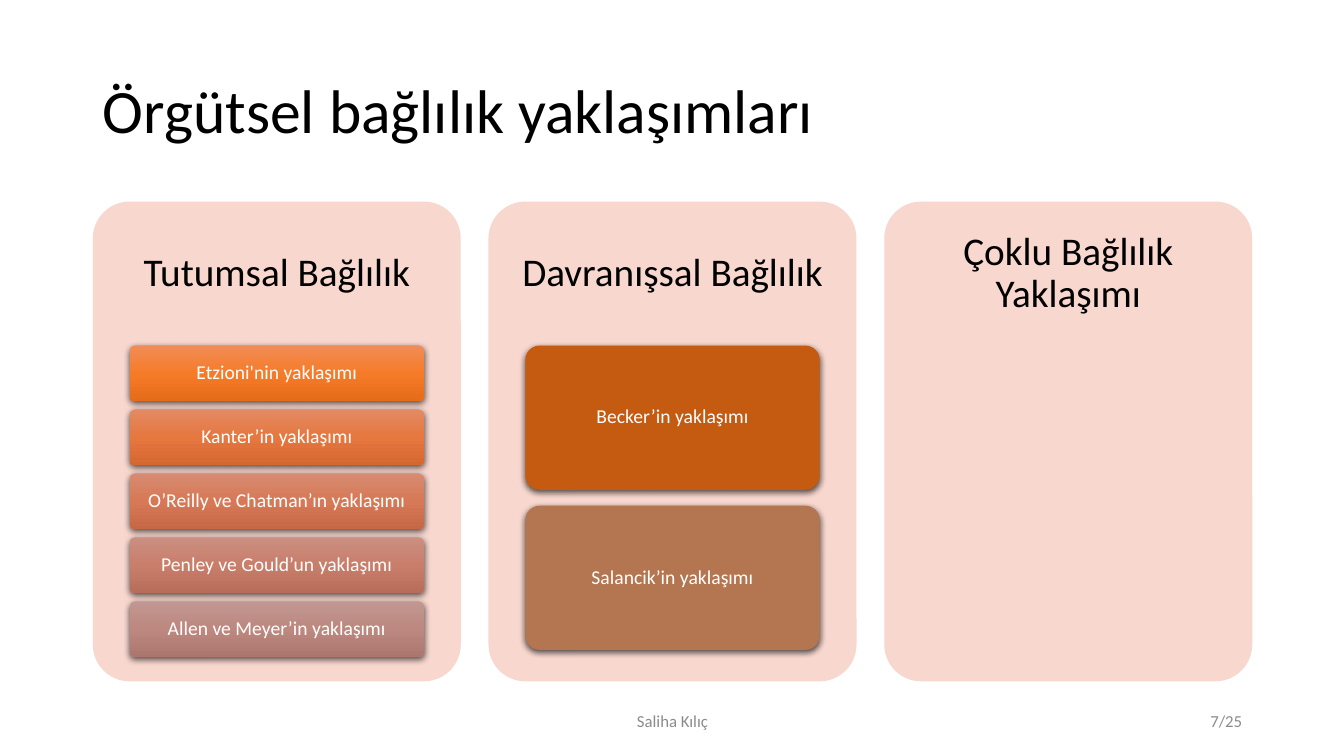
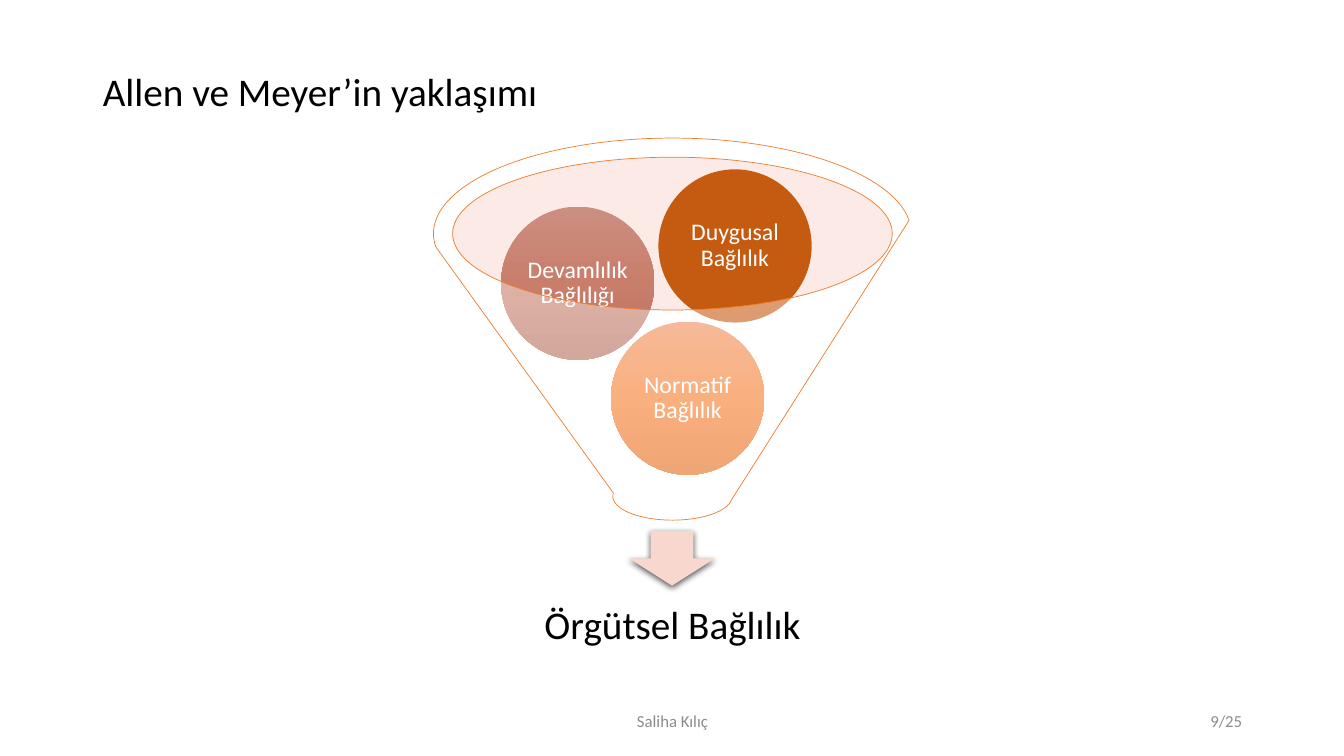
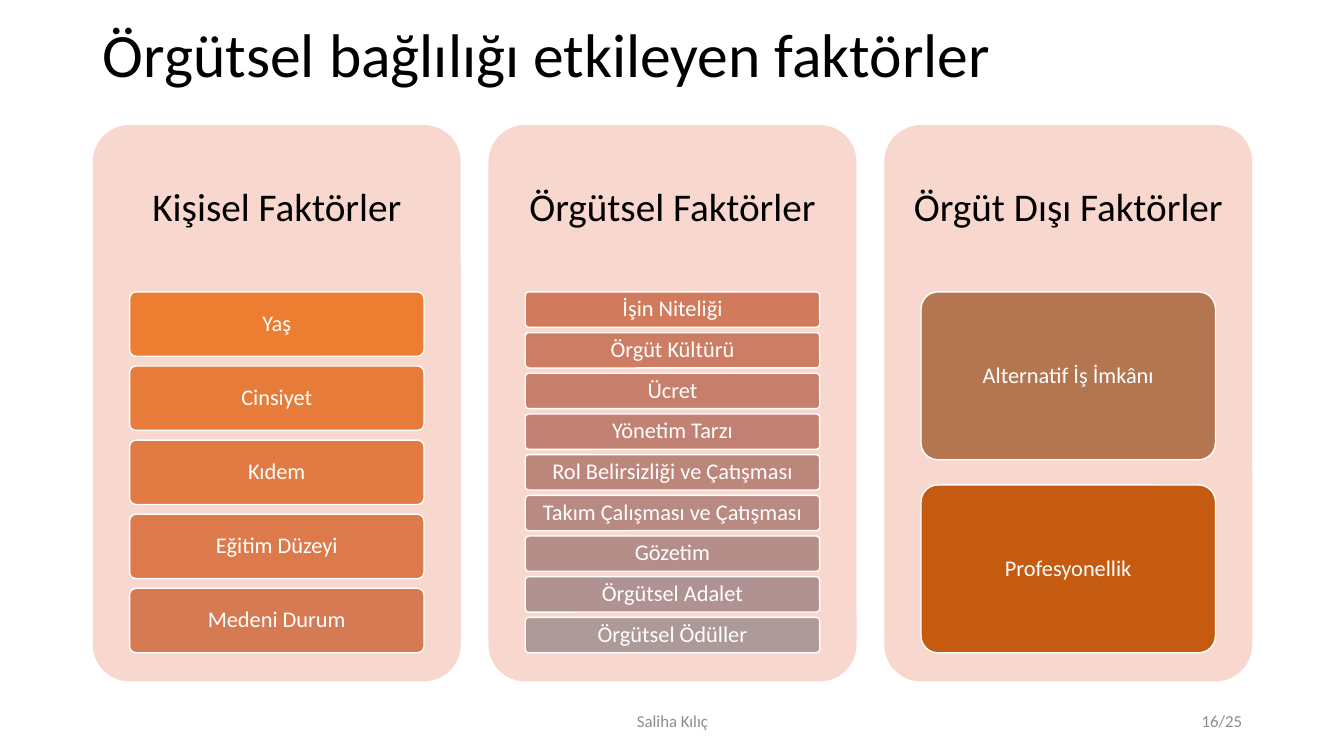
"""Build three slides on approaches to and factors of organisational commitment."""
from copy import deepcopy

from lxml import etree
from pptx import Presentation
from pptx.dml.color import RGBColor
from pptx.enum import shapes, text
from pptx.oxml.ns import qn
from pptx.util import Inches, Pt

BLACK = RGBColor(0x00, 0x00, 0x00)
WHITE = RGBColor(0xFF, 0xFF, 0xFF)
GREY = RGBColor(0x8C, 0x8C, 0x8C)
PANEL = RGBColor(0xF8, 0xD7, 0xCE)
RIM = RGBColor(0xF6, 0xCC, 0xBE)
ORANGE = RGBColor(0xED, 0x7D, 0x31)
RUST = RGBColor(0xC5, 0x5A, 0x11)
BROWN = RGBColor(0xB3, 0x76, 0x51)
GLOW_ORANGE = [RGBColor.from_string(code) for code in ("F18C57", "F67B28", "E56C19")]
GLOW_CORAL = [RGBColor.from_string(code) for code in ("E38A63", "E6773F", "D56730")]
GLOW_CLAY = [RGBColor.from_string(code) for code in ("D78B72", "D77956", "C66846")]
GLOW_ROSE = [RGBColor.from_string(code) for code in ("CB8F81", "C97E6B", "B76D5B")]
GLOW_MAUVE = [RGBColor.from_string(code) for code in ("C19791", "BC8880", "AA766E")]
PERSONAL = [RGBColor.from_string(code) for code in
            ("ED7D31", "E77B3A", "E17A43", "DC7A4B", "D67A54")]
ORGANISATIONAL = [RGBColor.from_string(code) for code in
                  ("D17B5C", "CC7D64", "C77F6C", "C28273", "BD867B",
                   "B98A82", "B58E8A", "B09391", "AC9998")]

LEFT = text.PP_ALIGN.LEFT
CENTER = text.PP_ALIGN.CENTER
RIGHT = text.PP_ALIGN.RIGHT
KIND = shapes.MSO_SHAPE


def write(box, words, size, color, align=CENTER, margins=(0.1, 0.05), spacing=0.9):
    """Fill a box with one formatted paragraph."""
    frame = box.text_frame
    side, edge = (Inches(margin) for margin in margins)
    layout = {"word_wrap": True, "auto_size": text.MSO_AUTO_SIZE.NONE,
              "vertical_anchor": text.MSO_ANCHOR.MIDDLE,
              "margin_left": side, "margin_right": side,
              "margin_top": edge, "margin_bottom": edge}
    for name, value in layout.items():
        setattr(frame, name, value)
    para = frame.paragraphs[0]
    para.alignment = align
    para.line_spacing = spacing
    span = para.add_run()
    span.text = words
    for name, value in {"name": "Calibri", "size": Pt(size), "bold": False}.items():
        setattr(span.font, name, value)
    span.font.color.rgb = color


def draw(page, kind, at, fill, line=None, shadow=False, opacity=None):
    """Add a preset shape with a solid or three-stop fill."""
    shape = page.shapes.add_shape(kind, *map(Inches, at))
    shape.shadow.inherit = False
    props = shape._element.spPr
    if kind == KIND.ROUNDED_RECTANGLE:
        shape.adjustments[0] = 0.1
    if isinstance(fill, list):
        shape.fill.gradient()
        shape.fill.gradient_angle = 270
        stops = props.find(".//" + qn("a:gsLst"))
        stops.insert(1, deepcopy(stops[0]))
        for stop, position, color in zip(shape.fill.gradient_stops, (0, 0.5, 1), fill):
            stop.position = position
            stop.color.rgb = color
    else:
        shape.fill.solid()
        shape.fill.fore_color.rgb = fill
    if opacity:
        color = props.find(qn("a:solidFill")).find(qn("a:srgbClr"))
        etree.SubElement(color, qn("a:alpha"), val=str(opacity * 1000))
    if line:
        shape.line.color.rgb, shape.line.width = line[0], Pt(line[1])
    else:
        shape.line.fill.background()
    if shadow:
        outer = etree.SubElement(props.find(qn("a:effectLst")), qn("a:outerShdw"),
                                 blurRad=str(Pt(4.5)), dist=str(Pt(1.5)),
                                 dir="5400000", algn="ctr", rotWithShape="0")
        color = etree.SubElement(outer, qn("a:srgbClr"), val="000000")
        etree.SubElement(color, qn("a:alpha"), val="63000")
    return shape


deck = Presentation()
deck.slide_width = Inches(13.33)
deck.slide_height = Inches(7.5)

pages = []
for title, top, height, size, number in (
    ("Örgütsel bağlılık yaklaşımları", 0.4, 1.45, 44, "7/25"),
    ("Allen ve Meyer’in yaklaşımı", 0.46, 0.94, 28, "9/25"),
    ("Örgütsel bağlılığı etkileyen faktörler", 0.15, 0.84, 44, "16/25"),
):
    page = deck.slides.add_slide(deck.slide_layouts[5])
    heading = page.shapes.title
    place = {"left": 0.92, "top": top, "width": 11.5, "height": height}
    for name, value in place.items():
        setattr(heading, name, Inches(value))
    write(heading, title, size, BLACK, LEFT)
    for words, left, width, align in (("Saliha Kılıç", 4.42, 4.5, CENTER),
                                      (number, 9.42, 3, RIGHT)):
        footer = page.shapes.add_textbox(*map(Inches, (left, 6.95, width, 0.4)))
        write(footer, words, 12, GREY, align, spacing=1)
    pages.append(page)
approaches, funnel_page, factors = pages

approach_columns = (
    ("Tutumsal Bağlılık", 3.09, 0.15, (
        ("Etzioni'nin yaklaşımı", GLOW_ORANGE),
        ("Kanter’in yaklaşımı", GLOW_CORAL),
        ("O’Reilly ve Chatman’ın yaklaşımı", GLOW_CLAY),
        ("Penley ve Gould’un yaklaşımı", GLOW_ROSE),
        ("Allen ve Meyer’in yaklaşımı", GLOW_MAUVE))),
    ("Davranışsal Bağlılık", 3.02, 0.11, (
        ("Becker’in yaklaşımı", RUST),
        ("Salancik’in yaklaşımı", BROWN))),
    ("Çoklu Bağlılık Yaklaşımı", 3.09, 0.15, ()),
)
factor_columns = (
    ("Kişisel Faktörler", 3.58, 0.15, tuple(zip(
        ("Yaş", "Cinsiyet", "Kıdem", "Eğitim Düzeyi", "Medeni Durum"), PERSONAL))),
    ("Örgütsel Faktörler", 3.58, 0.15, tuple(zip(
        ("İşin Niteliği", "Örgüt Kültürü", "Ücret", "Yönetim Tarzı",
         "Rol Belirsizliği ve Çatışması", "Takım Çalışması ve Çatışması",
         "Gözetim", "Örgütsel Adalet", "Örgütsel Ödüller"), ORGANISATIONAL))),
    ("Örgüt Dışı Faktörler", 3.58, 0.15, (
        ("Alternatif İş İmkânı", BROWN),
        ("Profesyonellik", RUST))),
)

PANEL_WIDTH, PANEL_GAP, PANEL_BOTTOM = 3.65, 0.275, 6.76
for page, columns, top, size, look in (
    (approaches, approach_columns, 2, 14, {"shadow": True}),
    (factors, factor_columns, 1.24, 16, {"line": (WHITE, 1)}),
):
    panel_height = PANEL_BOTTOM - top
    head_height = 0.3 * panel_height
    for column, (heading, stack, gap, cards) in enumerate(columns):
        left = 0.92 + column * (PANEL_WIDTH + PANEL_GAP)
        draw(page, KIND.ROUNDED_RECTANGLE, (left, top, PANEL_WIDTH, panel_height), PANEL)
        box = page.shapes.add_textbox(*map(Inches, (left, top, PANEL_WIDTH, head_height)))
        write(box, heading, 28, BLACK, margins=(0.12, 0.12))
        count = len(cards)
        for row, (words, fill) in enumerate(cards):
            card_height = stack / (count + gap * (count - 1))
            card_top = top + head_height + row * card_height * (1 + gap)
            card = draw(page, KIND.ROUNDED_RECTANGLE,
                        (left + 0.1 * PANEL_WIDTH, card_top, 0.8 * PANEL_WIDTH, card_height),
                        fill, **look)
            write(card, words, size, WHITE, margins=(0.04, 0.03))

draw(funnel_page, KIND.OVAL, (4.48, 1.56, 4.37, 1.52), RIM, opacity=40)
draw(funnel_page, KIND.DOWN_ARROW, (6.24, 5.27, 0.85, 0.54), PANEL, shadow=True)
result = funnel_page.shapes.add_textbox(*map(Inches, (4.64, 5.71, 4.06, 1.02)))
write(result, "Örgütsel Bağlılık", 28, BLACK, margins=(0.22, 0.22))
for words, left, top, fill in (
    ("Normatif Bağlılık", 6.06, 3.19, GLOW_ORANGE),
    ("Devamlılık Bağlılığı", 4.97, 2.05, GLOW_ROSE),
    ("Duygusal Bağlılık", 6.53, 1.68, RUST),
):
    ball = draw(funnel_page, KIND.OVAL, (left, top, 1.52, 1.52), fill)
    write(ball, words, 17, WHITE, margins=(0.02, 0.02))
draw(funnel_page, KIND.FUNNEL, (4.3, 1.37, 4.74, 3.79), WHITE, line=(ORANGE, 0.5), opacity=40)

deck.save("out.pptx")
